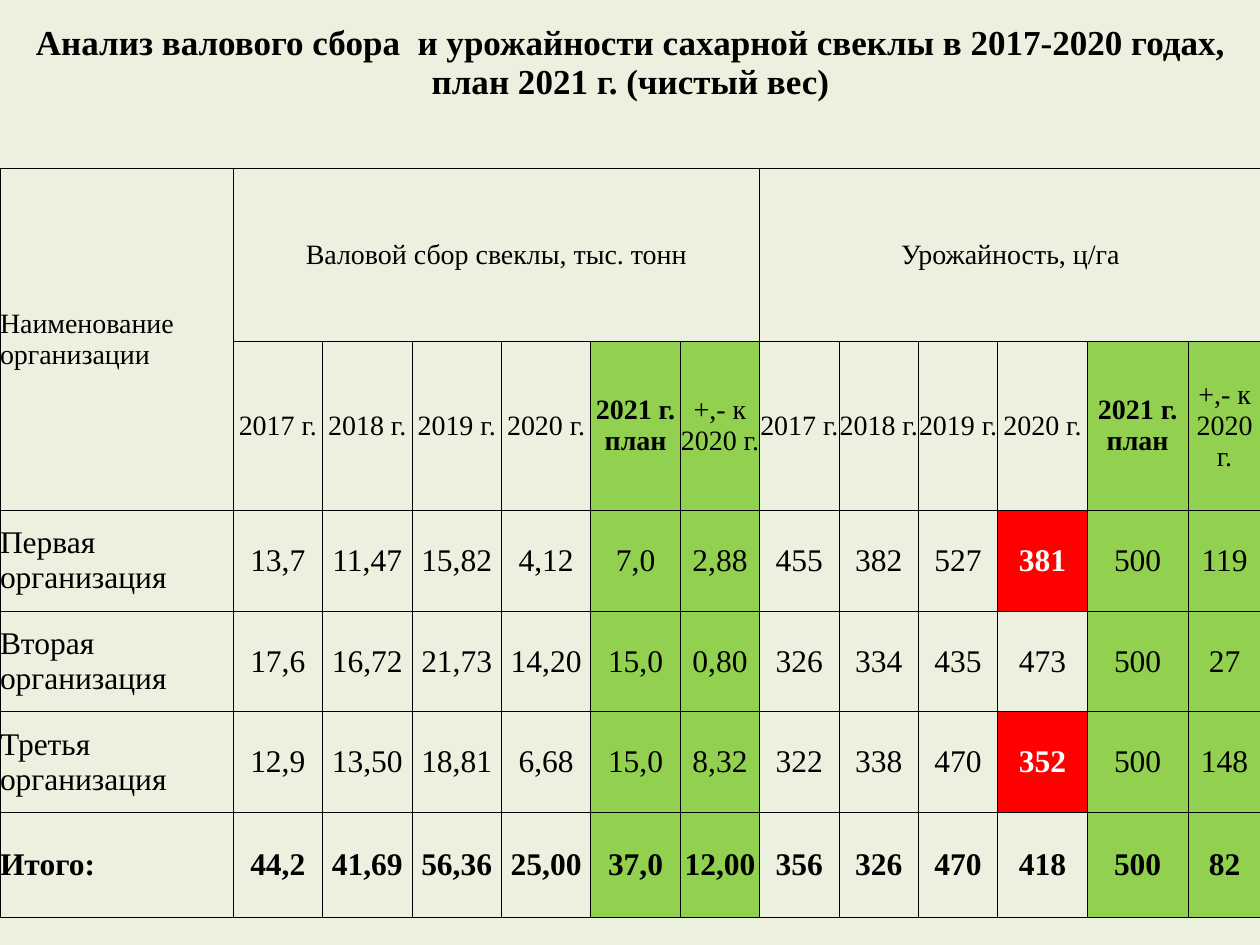
import pptx
import pptx.dml.color
import pptx.enum.text
import pptx.oxml
import pptx.oxml.ns
import pptx.util

Inches = pptx.util.Inches
PP_ALIGN = pptx.enum.text.PP_ALIGN
PALE, GREEN, RED = "EBF1DE", "92D050", "FF0000"
BLACK, WHITE = "000000", "FFFFFF"


def color(value):
    return pptx.dml.color.RGBColor.from_string(value)


def set_borders(cell, visible):
    """Draw thin black lines on the named sides (L, R, T, B), none on the others."""
    properties = cell._tc.get_or_add_tcPr()
    for side in "LRTB":
        fill = (f'<a:solidFill><a:srgbClr val="{BLACK}"/></a:solidFill>'
                if side in visible else "<a:noFill/>")
        properties.append(pptx.oxml.parse_xml(
            f'<a:ln{side} {pptx.oxml.ns.nsdecls("a")} w="6350">{fill}</a:ln{side}>'))


title = ("Анализ валового сбора  и урожайности сахарной свеклы "
         "в 2017-2020 годах, план 2021 г. (чистый вес)")
periods = ["2017 г.", "2018 г.", "2019 г.", "2020 г.", "2021 г. план", "+,- к 2020 г."]
rows = [
    [title] + [""] * 12,
    ["Наименование организации", "Валовой сбор свеклы, тыс. тонн"] + [""] * 5
    + ["Урожайность, ц/га"] + [""] * 5,
    [""] + periods * 2,
    ["Первая организация", "13,7", "11,47", "15,82", "4,12", "7,0", "2,88",
     "455", "382", "527", "381", "500", "119"],
    ["Вторая организация", "17,6", "16,72", "21,73", "14,20", "15,0", "0,80",
     "326", "334", "435", "473", "500", "27"],
    ["Третья организация", "12,9", "13,50", "18,81", "6,68", "15,0", "8,32",
     "322", "338", "470", "352", "500", "148"],
    ["Итого:", "44,2", "41,69", "56,36", "25,00", "37,0", "12,00",
     "356", "326", "470", "418", "500", "82"],
]
column_widths = [1.85] + [0.71] * 5 + [0.63] * 4 + [0.71, 0.8, 0.58]
row_heights = [1.34, 1.37, 1.34, 0.8, 0.8, 0.8, 0.83]
text_sizes = [20, 16, 16, 18, 18, 18, 18]
green_columns = {5, 6, 11, 12}
low_yields = {(3, 10), (5, 10)}
title_row, group_row, period_row, total_row = 0, 1, 2, 6

deck = pptx.Presentation()
deck.slide_width, deck.slide_height = Inches(10), Inches(7.5)
page = deck.slides.add_slide(deck.slide_layouts[6])
page.background.fill.solid()
page.background.fill.fore_color.rgb = color(PALE)

table = page.shapes.add_table(len(rows), len(column_widths), Inches(0), Inches(0),
                              Inches(10), Inches(7.29)).table
table.first_row = table.horz_banding = False
for column, width in zip(table.columns, column_widths):
    column.width = Inches(width)
for row, height in zip(table.rows, row_heights):
    row.height = Inches(height)

for r, texts in enumerate(rows):
    for c, text in enumerate(texts):
        cell = table.cell(r, c)
        cell.margin_left = cell.margin_right = cell.margin_top = cell.margin_bottom = 0
        cell.vertical_anchor = pptx.enum.text.MSO_ANCHOR.MIDDLE
        set_borders(cell, "B" if r == title_row else "LRTB")

        is_low = (r, c) in low_yields
        is_green = r >= period_row and c in green_columns
        cell.fill.solid()
        cell.fill.fore_color.rgb = color(RED if is_low else GREEN if is_green else PALE)

        cell.text = text
        para = cell.text_frame.paragraphs[0]
        para.alignment = PP_ALIGN.LEFT if c == 0 and r != title_row else PP_ALIGN.CENTER
        para.font.name = "Times New Roman"
        para.font.size = pptx.util.Pt(text_sizes[r])
        para.font.bold = (r in (title_row, total_row) or is_low
                          or text == "2021 г. план")
        para.font.color.rgb = color(WHITE if is_low else BLACK)

title_cell = table.cell(title_row, 0)
title_cell.vertical_anchor = pptx.enum.text.MSO_ANCHOR.TOP
title_cell.margin_top = Inches(0.19)

title_cell.merge(table.cell(title_row, 12))
table.cell(group_row, 0).merge(table.cell(period_row, 0))
for first in (1, 7):
    table.cell(group_row, first).merge(table.cell(group_row, first + 5))

deck.save("out.pptx")
